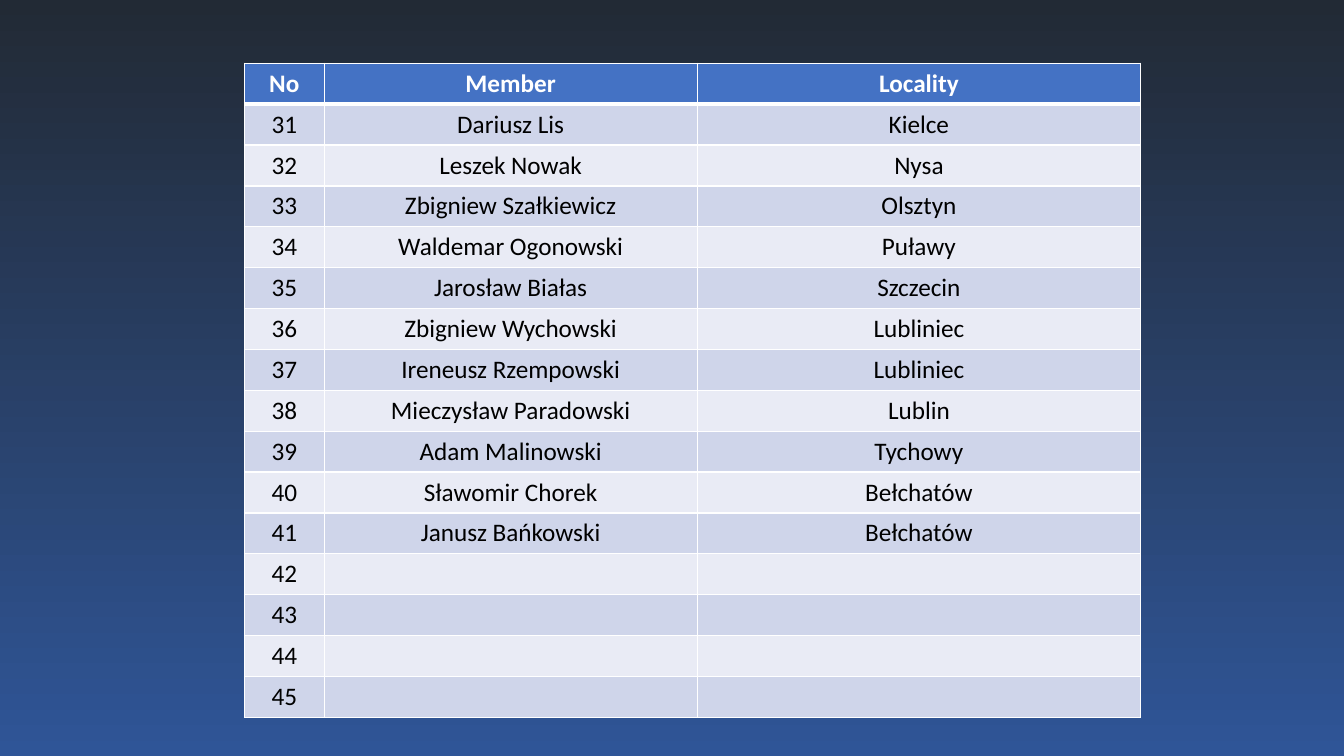
from dataclasses import dataclass

from lxml import etree
from pptx import Presentation
from pptx.dml.color import RGBColor
from pptx.enum.text import MSO_ANCHOR, PP_ALIGN
from pptx.oxml.ns import qn
from pptx.util import Pt

CENTER = PP_ALIGN.CENTER
TOP = MSO_ANCHOR.TOP


@dataclass(frozen=True)
class Theme:
    """Colours, font and type sizes of the slide."""
    font: str = "Calibri"
    size: float = 18
    dusk: str = "222A35"
    blue: str = "2F5597"
    head: str = "4472C4"
    bands: tuple = ("CFD5EA", "E9EBF5")
    white: str = "FFFFFF"
    black: str = "000000"
    thin: float = 1
    thick: float = 3


THEME = Theme()
HEADS = ("No", "Member", "Locality")
FIRST, LAST = 31, 45
WIDTHS = (56.9, 266.5, 316.8)
ROW = 29.2
MEMBERS = (
    ("Dariusz Lis", "Kielce"),
    ("Leszek Nowak", "Nysa"),
    ("Zbigniew Szałkiewicz", "Olsztyn"),
    ("Waldemar Ogonowski", "Puławy"),
    ("Jarosław Białas", "Szczecin"),
    ("Zbigniew Wychowski", "Lubliniec"),
    ("Ireneusz Rzempowski", "Lubliniec"),
    ("Mieczysław Paradowski", "Lublin"),
    ("Adam Malinowski", "Tychowy"),
    ("Sławomir Chorek", "Bełchatów"),
    ("Janusz Bańkowski", "Bełchatów"),
)


def paint_back(slide):
    """Fill the slide with a gradient from dusk at the top to blue."""
    fill = slide.background.fill
    fill.gradient()
    fill.gradient_angle = 270
    for stop, color in zip(fill.gradient_stops, (THEME.dusk, THEME.blue)):
        stop.color.rgb = RGBColor.from_string(color)


def add_edges(cell, top, bottom):
    """Draw white borders round a cell."""
    props = cell._tc.get_or_add_tcPr()
    edges = {"a:lnL": THEME.thin, "a:lnR": THEME.thin, "a:lnT": top, "a:lnB": bottom}
    for tag, width in edges.items():
        line = etree.SubElement(props, qn(tag), w=str(Pt(width)))
        solid = etree.SubElement(line, qn("a:solidFill"))
        etree.SubElement(solid, qn("a:srgbClr"), val=THEME.white)


def fill_cell(cell, text, row):
    """Style one cell by its row and write its text."""
    head = row == 0
    add_edges(cell, THEME.thick if row == 1 else THEME.thin,
              THEME.thick if head else THEME.thin)
    cell.fill.solid()
    back = THEME.head if head else THEME.bands[(row - 1) % 2]
    cell.fill.fore_color.rgb = RGBColor.from_string(back)
    cell.vertical_anchor = TOP
    para = cell.text_frame.paragraphs[0]
    para.alignment = CENTER
    if not text:
        return
    run = para.add_run()
    run.text = text
    look = {"name": THEME.font, "size": Pt(THEME.size), "bold": head}
    for key, value in look.items():
        setattr(run.font, key, value)
    ink = THEME.white if head else THEME.black
    run.font.color.rgb = RGBColor.from_string(ink)


def add_roster(slide, left, top, widths, height):
    """Place the member table with its corner at the given point."""
    rows = [HEADS]
    for spot, number in enumerate(range(FIRST, LAST + 1)):
        person = MEMBERS[spot] if spot < len(MEMBERS) else ("", "")
        rows.append((str(number), *person))
    table = slide.shapes.add_table(
        len(rows), len(widths), Pt(left), Pt(top),
        Pt(sum(widths)), Pt(height * len(rows))).table
    table.horz_banding = False
    for column, width in zip(table.columns, widths):
        column.width = Pt(width)
    for r, texts in enumerate(rows):
        table.rows[r].height = Pt(height)
        for c, text in enumerate(texts):
            fill_cell(table.cell(r, c), text, r)


def main():
    """Build the slide and save it."""
    deck = Presentation()
    deck.slide_width, deck.slide_height = Pt(960), Pt(540)
    slide = deck.slides.add_slide(deck.slide_layouts[6])
    paint_back(slide)
    add_roster(slide, 174.6, 45.2, WIDTHS, ROW)
    deck.save("out.pptx")


if __name__ == "__main__":
    main()
